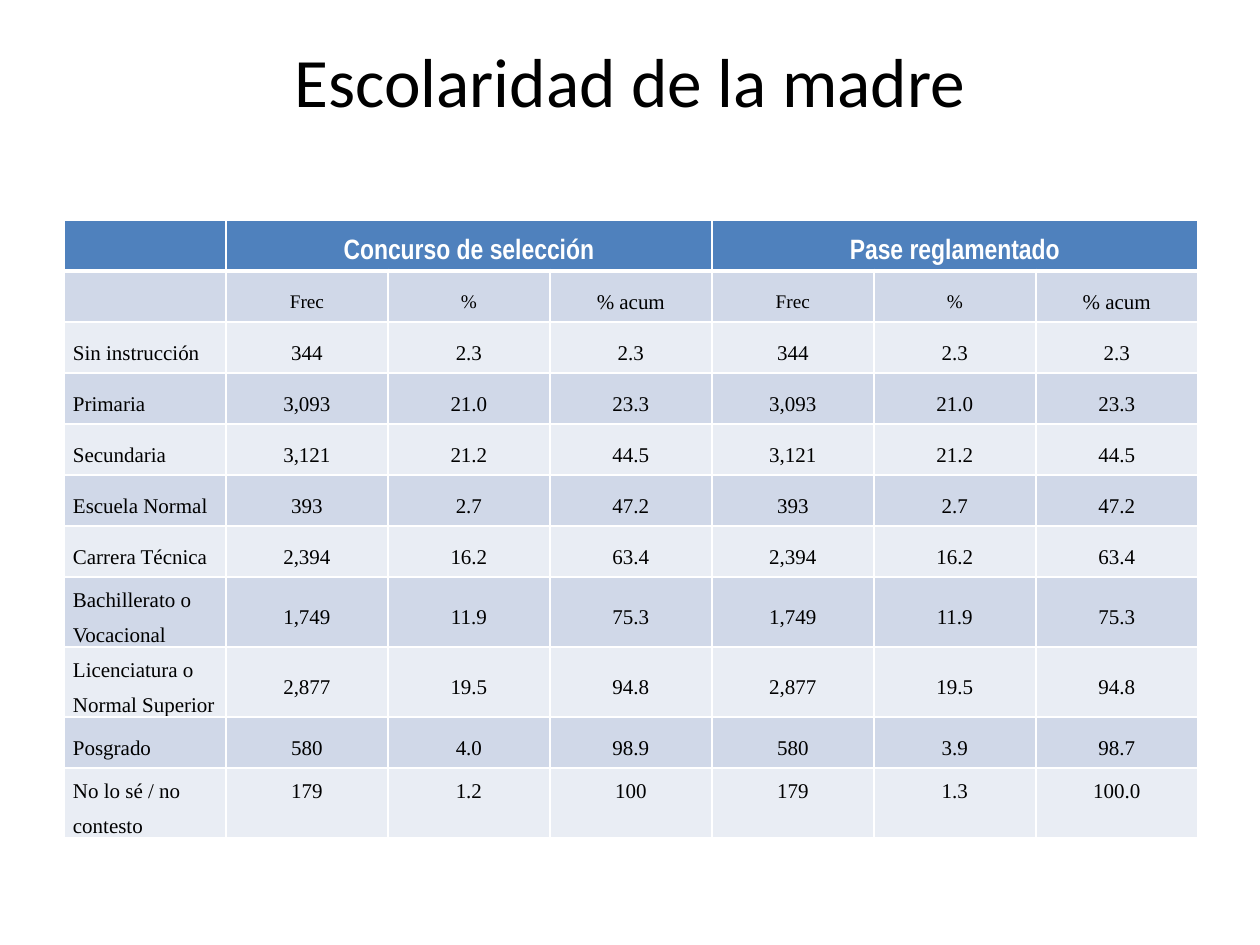
from dataclasses import dataclass

from lxml import etree
from pptx import Presentation
from pptx.dml.color import RGBColor
from pptx.enum.text import MSO_ANCHOR, PP_ALIGN
from pptx.oxml.ns import qn
from pptx.util import Emu, Pt

EMU_PER_PX = 914400 / 126
WHITE = RGBColor(0xFF, 0xFF, 0xFF)
BLACK = RGBColor(0x00, 0x00, 0x00)
BLUE = RGBColor(0x4F, 0x81, 0xBD)
BAND_DARK = RGBColor(0xD0, 0xD8, 0xE8)
BAND_LIGHT = RGBColor(0xE9, 0xED, 0xF4)
LEFT, CENTER = PP_ALIGN.LEFT, PP_ALIGN.CENTER
TOP, MIDDLE = MSO_ANCHOR.TOP, MSO_ANCHOR.MIDDLE

COL_W, ROW_H, CELL_INSET = 162, 51, 9
THIN, THICK = 1, 3


@dataclass(frozen=True)
class TextStyle:
    font: str
    size: float
    color: RGBColor
    bold: bool = False


TITLE = TextStyle("Calibri", 39.6, BLACK)
GROUP = TextStyle("Arial Narrow", 16, WHITE, True)
SUBHEAD = TextStyle("Times New Roman", 11, BLACK)
BODY = TextStyle("Times New Roman", 12, BLACK)

ROWS = [
    ("", "Concurso de selección", "", "", "Pase reglamentado", "", ""),
    ("", "Frec", "%", "% acum", "Frec", "%", "% acum"),
    ("Sin instrucción", "344", "2.3", "2.3", "344", "2.3", "2.3"),
    ("Primaria", "3,093", "21.0", "23.3", "3,093", "21.0", "23.3"),
    ("Secundaria", "3,121", "21.2", "44.5", "3,121", "21.2", "44.5"),
    ("Escuela Normal", "393", "2.7", "47.2", "393", "2.7", "47.2"),
    ("Carrera Técnica", "2,394", "16.2", "63.4", "2,394", "16.2", "63.4"),
    ("Bachillerato o Vocacional", "1,749", "11.9", "75.3", "1,749", "11.9", "75.3"),
    ("Licenciatura o Normal Superior", "2,877", "19.5", "94.8", "2,877", "19.5", "94.8"),
    ("Posgrado", "580", "4.0", "98.9", "580", "3.9", "98.7"),
    ("No lo sé / no contesto", "179", "1.2", "100", "179", "1.3", "100.0"),
]


def px(n: int) -> Emu:
    return Emu(round(n * EMU_PER_PX))


def add_run(p, text: str, style: TextStyle) -> None:
    r = p.add_run()
    r.text = text
    r.font.name = style.font
    r.font.size = Pt(style.size)
    r.font.bold = style.bold
    r.font.color.rgb = style.color


def set_borders(cell, top: int, bottom: int) -> None:
    tc_pr = cell._tc.get_or_add_tcPr()
    for side, width in (("L", THIN), ("R", THIN), ("T", top), ("B", bottom)):
        ln = etree.SubElement(tc_pr, qn(f"a:ln{side}"), w=str(Pt(width)))
        fill = etree.SubElement(ln, qn("a:solidFill"))
        etree.SubElement(fill, qn("a:srgbClr"), val=str(WHITE))


def text_style(row: int, text: str) -> TextStyle:
    if row == 0:
        return GROUP
    return SUBHEAD if text in ("Frec", "%") else BODY


def fill_cell(cell, row: int, col: int, text: str) -> None:
    set_borders(cell, THICK if row == 1 else THIN, THICK if row == 0 else THIN)
    cell.fill.solid()
    band = BAND_DARK if row % 2 else BAND_LIGHT
    cell.fill.fore_color.rgb = BLUE if row == 0 else band
    cell.margin_left = cell.margin_right = px(CELL_INSET)
    cell.margin_top = cell.margin_bottom = 0
    cell.vertical_anchor = TOP if row == len(ROWS) - 1 else MIDDLE
    if text:
        p = cell.text_frame.paragraphs[0]
        p.alignment = CENTER if col else LEFT
        p.line_spacing = 1.5
        add_run(p, text, text_style(row, text))


def add_title(slide, text: str) -> None:
    sp = slide.shapes.title
    sp.left, sp.top, sp.width, sp.height = px(63), px(38), px(1134), px(157)
    tf = sp.text_frame
    tf.word_wrap = True
    tf.vertical_anchor = TOP
    tf.margin_top = 0
    p = tf.paragraphs[0]
    p.alignment = CENTER
    add_run(p, text, TITLE)


def add_schooling_table(slide) -> None:
    n_rows, n_cols = len(ROWS), len(ROWS[0])
    table = slide.shapes.add_table(
        n_rows, n_cols, px(64), px(220), px(COL_W * n_cols), px(ROW_H * n_rows)
    ).table
    for column in table.columns:
        column.width = px(COL_W)
    for row in table.rows:
        row.height = px(ROW_H)
    for i, values in enumerate(ROWS):
        for j, text in enumerate(values):
            fill_cell(table.cell(i, j), i, j, text)
    for first in (1, 4):
        table.cell(0, first).merge(table.cell(0, first + 2))


def main() -> None:
    prs = Presentation()
    prs.slide_width, prs.slide_height = px(1260), px(945)
    slide = prs.slides.add_slide(prs.slide_layouts[5])
    add_title(slide, "Escolaridad de la madre")
    add_schooling_table(slide)
    prs.save("out.pptx")


if __name__ == "__main__":
    main()
